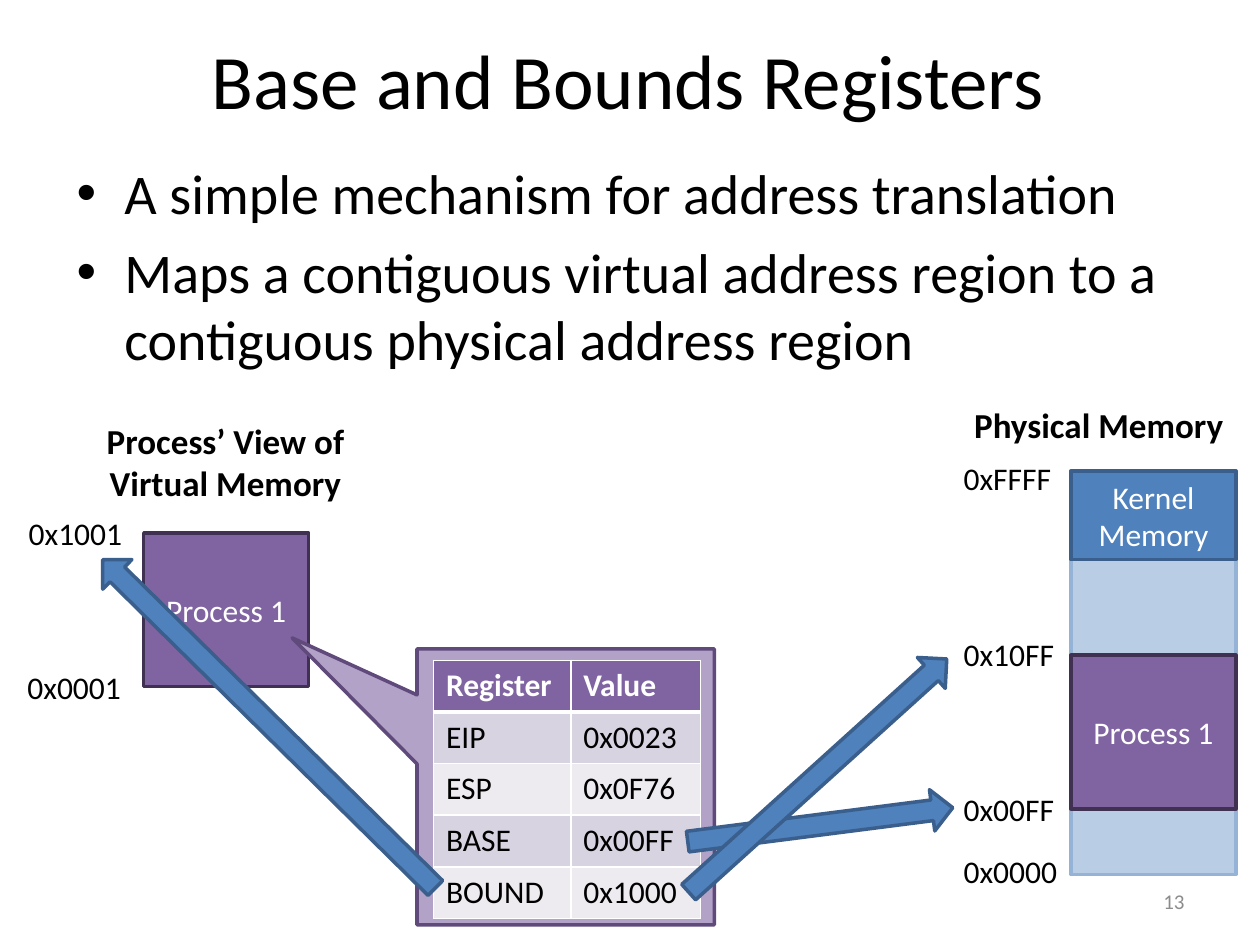
"""Build the slide on base and bounds registers."""
from lxml import etree
from pptx import Presentation
from pptx.dml.color import RGBColor
from pptx.enum.shapes import MSO_SHAPE
from pptx.enum.text import MSO_ANCHOR, MSO_AUTO_SIZE, PP_ALIGN
from pptx.oxml.ns import qn
from pptx.util import Inches, Pt

RECT, CALLOUT, ARROW = MSO_SHAPE.RECTANGLE, MSO_SHAPE.RECTANGULAR_CALLOUT, MSO_SHAPE.RIGHT_ARROW
LEFT, CENTER, RIGHT = PP_ALIGN.LEFT, PP_ALIGN.CENTER, PP_ALIGN.RIGHT
TOP, MIDDLE = MSO_ANCHOR.TOP, MSO_ANCHOR.MIDDLE
FIT = MSO_AUTO_SIZE.SHAPE_TO_FIT_TEXT

FONT = "Calibri"
BLACK = RGBColor(0x00, 0x00, 0x00)
WHITE = RGBColor(0xFF, 0xFF, 0xFF)
GRAY = RGBColor(0x8C, 0x8C, 0x8C)
BLUE = RGBColor(0x4F, 0x81, 0xBD)
DARK_BLUE = RGBColor(0x3A, 0x5F, 0x8C)
PALE_BLUE = RGBColor(0xB9, 0xCD, 0xE5)
SOFT_BLUE = RGBColor(0x95, 0xB3, 0xD7)
PURPLE = RGBColor(0x80, 0x64, 0xA2)
DARK_PURPLE = RGBColor(0x40, 0x31, 0x52)
PALE_PURPLE = RGBColor(0xB3, 0xA2, 0xC7)
MID_PURPLE = RGBColor(0x60, 0x4A, 0x7B)
BANDS = (RGBColor(0xED, 0xEA, 0xF0), RGBColor(0xD8, 0xD3, 0xE0))

TITLE = "Base and Bounds Registers"
BULLETS = [
    "A simple mechanism for address translation",
    "Maps a contiguous virtual address region to a contiguous physical address region",
]
HEADINGS = [
    (["Physical Memory"], (7.62, 3.15, 2.2, 0.44)),
    (["Process’ View of", "Virtual Memory"], (0.74, 3.28, 2.1, 0.77)),
]
ADDRESSES = [
    ("0xFFFF", 7.55, 3.59),
    ("0x10FF", 7.55, 4.99),
    ("0x00FF", 7.55, 6.22),
    ("0x0000", 7.55, 6.71),
    ("0x1001", 0.13, 4.03),
    ("0x0001", 0.12, 5.25),
]
MEMORY_BLOCKS = [
    ("", (8.5, 3.74, 1.31, 3.2), PALE_BLUE, SOFT_BLUE),
    ("Kernel Memory", (8.5, 3.74, 1.31, 0.7), BLUE, DARK_BLUE),
    ("Process 1", (8.5, 5.2, 1.31, 1.22), PURPLE, DARK_PURPLE),
    ("Process 1", (1.14, 4.23, 1.31, 1.22), PURPLE, DARK_PURPLE),
]
REGISTERS = [
    ("Register", "Value"),
    ("EIP", "0x0023"),
    ("ESP", "0x0F76"),
    ("BASE", "0x00FF"),
    ("BOUND", "0x1000"),
]
REGISTER_COLUMNS = (1.09, 1.03)
ROW_HEIGHT = 0.41
ARROWS = [
    ((5.45, 6.38, 2.12, 0.33), 352.7),
    ((0.28, 5.58, 3.71, 0.33), 224.6),
    ((5.11, 5.99, 2.76, 0.33), 317.9),
]


def box(place):
    return [Inches(length) for length in place]


def write(frame, lines, size, color=BLACK, bold=False, align=LEFT, anchor=TOP):
    frame.vertical_anchor = anchor
    for index, line in enumerate(lines):
        paragraph = frame.paragraphs[0] if index == 0 else frame.add_paragraph()
        paragraph.alignment = align
        run = paragraph.add_run()
        run.text = line
        run.font.name = FONT
        run.font.size = Pt(size)
        run.font.bold = bold
        run.font.color.rgb = color


def add_text(slide, place, lines, size, wrap=True, **style):
    frame = slide.shapes.add_textbox(*box(place)).text_frame
    frame.word_wrap = wrap
    if not wrap:
        frame.auto_size = FIT
    write(frame, lines, size, **style)
    return frame


def add_block(slide, kind, place, fill, line):
    block = slide.shapes.add_shape(kind, *box(place))
    block.shadow.inherit = False
    block.fill.solid()
    block.fill.fore_color.rgb = fill
    block.line.color.rgb = line
    block.line.width = Pt(2)
    return block


def add_bullets(slide):
    frame = add_text(slide, (0.51, 1.21, 9, 1.89), BULLETS, 32)
    for paragraph in frame.paragraphs:
        paragraph.space_before = Pt(6.4)
        properties = paragraph._p.get_or_add_pPr()
        properties.set("marL", str(Inches(0.38)))
        properties.set("indent", str(Inches(-0.38)))
        etree.SubElement(properties, qn("a:buFont"), typeface="Arial")
        etree.SubElement(properties, qn("a:buChar"), char="•")


def add_borders(cell, bottom):
    properties = cell._tc.get_or_add_tcPr()
    sides = [("lnL", 1), ("lnR", 1), ("lnT", 1), ("lnB", bottom)]
    for index, (side, width) in enumerate(sides):
        border = etree.Element(qn(f"a:{side}"), w=str(Pt(width)))
        fill = etree.SubElement(border, qn("a:solidFill"))
        etree.SubElement(fill, qn("a:srgbClr"), val=str(WHITE))
        properties.insert(index, border)


def add_registers(slide):
    place = (3.44, 5.24, sum(REGISTER_COLUMNS), ROW_HEIGHT * len(REGISTERS))
    table = slide.shapes.add_table(len(REGISTERS), len(REGISTER_COLUMNS), *box(place)).table
    for column, width in zip(table.columns, REGISTER_COLUMNS):
        column.width = Inches(width)
    for r, values in enumerate(REGISTERS):
        header = r == 0
        table.rows[r].height = Inches(ROW_HEIGHT)
        for c, value in enumerate(values):
            cell = table.cell(r, c)
            cell.fill.solid()
            cell.fill.fore_color.rgb = PURPLE if header else BANDS[r % 2]
            write(cell.text_frame, [value], 18, WHITE if header else BLACK, header)
            add_borders(cell, 3 if header else 1)


def main():
    deck = Presentation()
    deck.slide_width, deck.slide_height = Inches(10), Inches(7.5)
    slide = deck.slides.add_slide(deck.slide_layouts[6])

    add_text(slide, (0.05, 0, 9.87, 1.25), [TITLE], 44, align=CENTER, anchor=MIDDLE)
    add_bullets(slide)
    add_text(slide, (7.17, 6.95, 2.33, 0.4), ["13"], 12, color=GRAY, align=RIGHT, anchor=MIDDLE)

    for label, place, fill, line in MEMORY_BLOCKS:
        block = add_block(slide, RECT, place, fill, line)
        if label:
            write(block.text_frame, [label], 18, WHITE, align=CENTER, anchor=MIDDLE)
    for lines, place in HEADINGS:
        add_text(slide, place, lines, 20, wrap=False, bold=True, align=CENTER)
    for address, left, top in ADDRESSES:
        add_text(slide, (left, top, 0.94, 0.4), [address], 18, wrap=False)

    callout = add_block(slide, CALLOUT, (3.31, 5.15, 2.36, 2.19), PALE_PURPLE, MID_PURPLE)
    callout.adjustments[0], callout.adjustments[1] = -0.92, -0.54
    add_registers(slide)
    for place, angle in ARROWS:
        add_block(slide, ARROW, place, BLUE, DARK_BLUE).rotation = angle

    deck.save("out.pptx")


if __name__ == "__main__":
    main()
